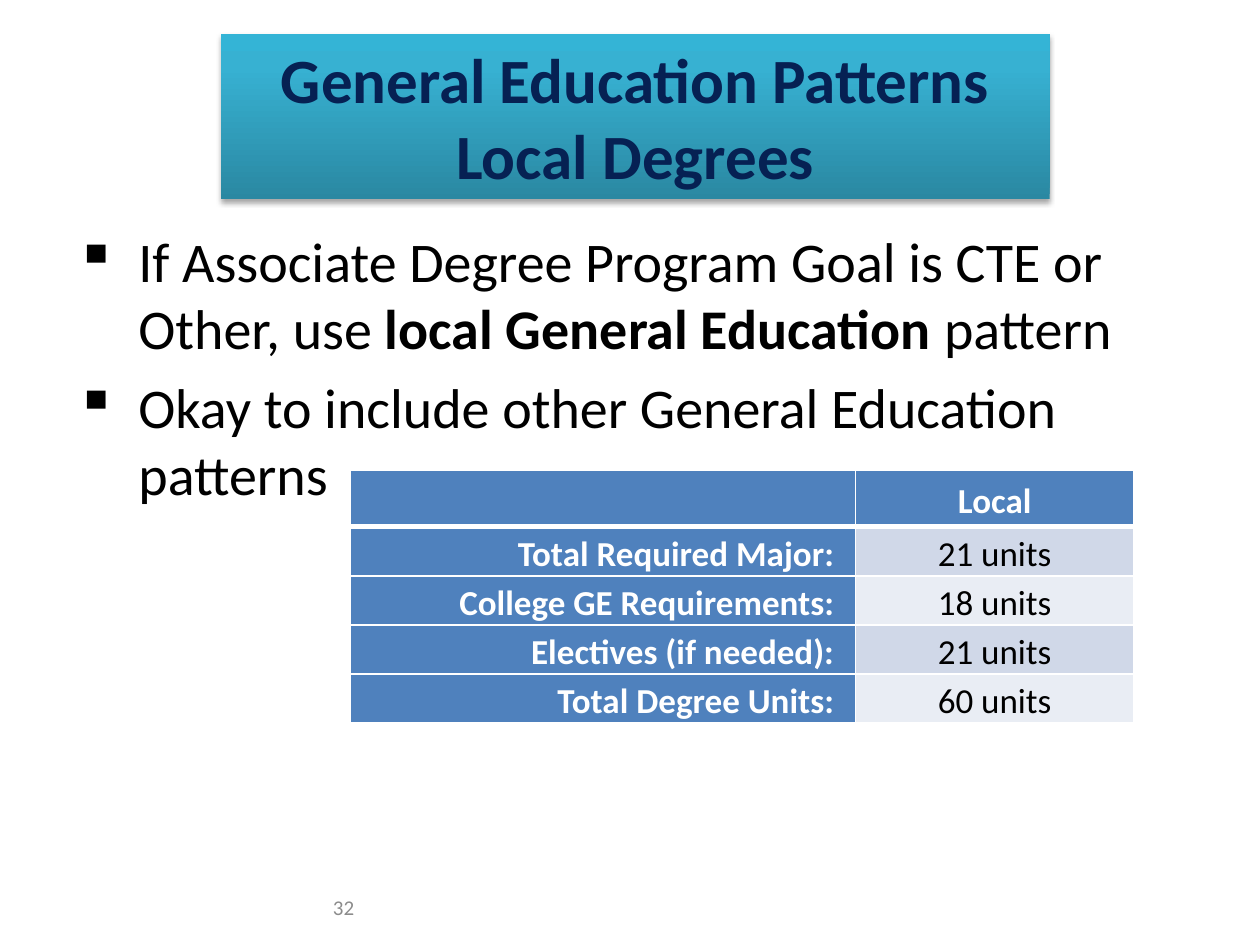
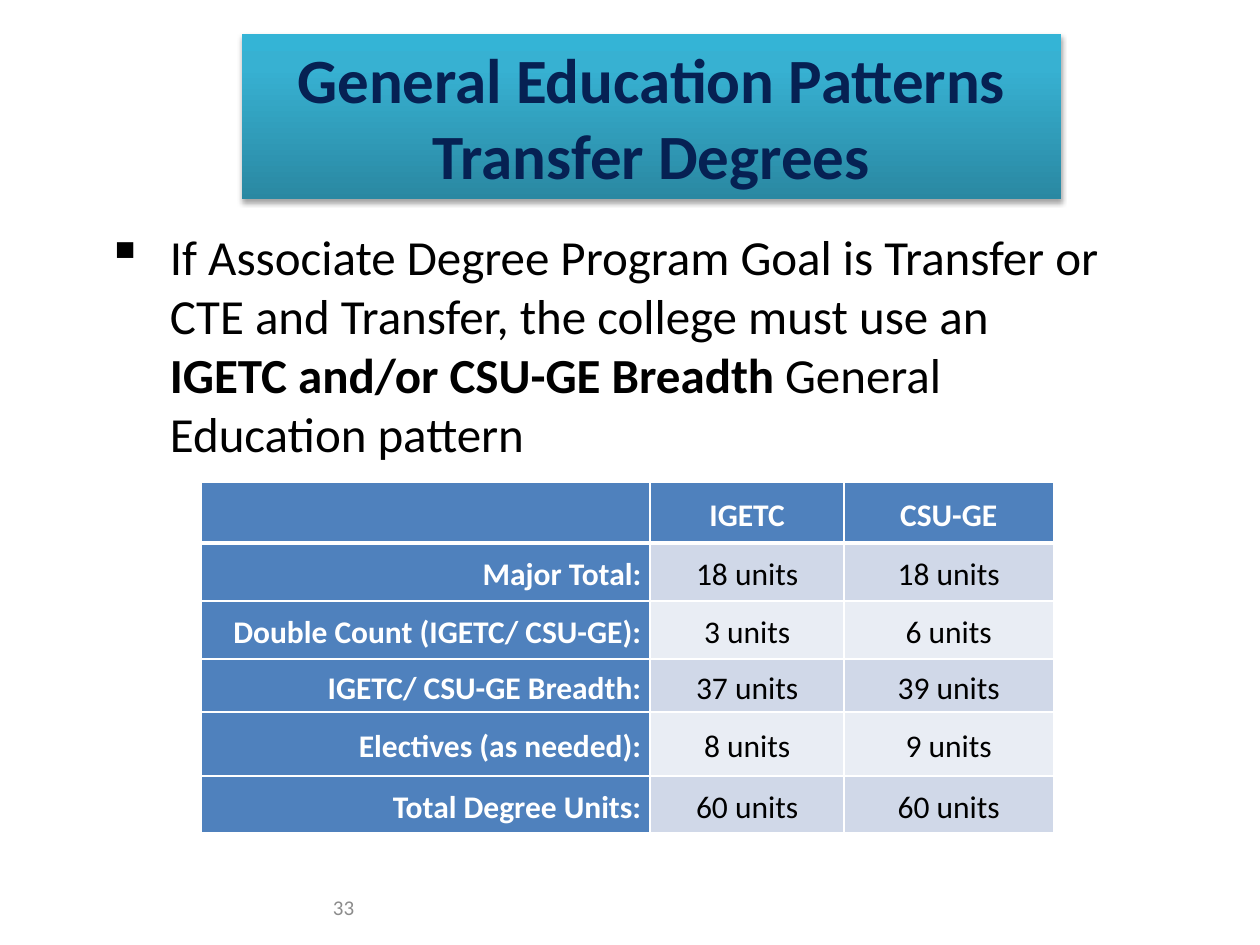
from copy import deepcopy

from lxml import etree
from pptx import Presentation
from pptx.dml.color import RGBColor
from pptx.enum.shapes import MSO_SHAPE
from pptx.enum.text import MSO_ANCHOR, PP_ALIGN
from pptx.oxml.ns import qn
from pptx.util import Inches, Pt

LEFT, CENTER, RIGHT = PP_ALIGN.LEFT, PP_ALIGN.CENTER, PP_ALIGN.RIGHT
TOP, MIDDLE = MSO_ANCHOR.TOP, MSO_ANCHOR.MIDDLE
RECTANGLE = MSO_SHAPE.RECTANGLE

FONT = "Calibri"
NAVY, BLACK, WHITE, GRAY = "062153", "000000", "FFFFFF", "8C8C8C"
HEADER_BLUE = "4F81BD"
BANDS = ["D0D8E8", "E9EDF4"]
TITLE_GRADIENT = [(0, "2A88A2"), (0.8, "37B1D2"), (1, "34B4D6")]
BULLET_HANG = 0.5

# Each bullet is a list of (text, bold) runs.
SLIDES = [
    {
        "number": "32",
        "title": "General Education Patterns\nLocal Degrees",
        "title_box": (1.75, 0.27, 6.58, 1.31),
        "bullets": [
            [("If Associate Degree Program Goal is CTE or Other, use ", False),
             ("local General Education ", True),
             ("pattern", False)],
            [("Okay to include other General Education patterns", False)],
        ],
        "body_box": (0.5, 1.75, 8.5, 2.36),
        "body_size": 32,
        "body_indent": 0.5,
        "units": [
            ["", "Local"],
            ["Total Required Major:", "21 units"],
            ["College GE Requirements:", "18 units"],
            ["Electives (if needed):", "21 units"],
            ["Total Degree Units:", "60 units"],
        ],
        "table_at": (2.78, 3.73),
        "columns": [4.01, 2.21],
        "rows": [0.45] + [0.39] * 4,
        "table_size": 20,
        "cell_margin": 0.17,
    },
    {
        "number": "33",
        "title": "General Education Patterns Transfer Degrees",
        "title_box": (1.92, 0.27, 6.5, 1.31),
        "bullets": [
            [("If Associate Degree Program Goal is Transfer or CTE and "
              "Transfer, the college must use an ", False),
             ("IGETC and/or CSU-GE Breadth ", True),
             ("General Education pattern", False)],
        ],
        "body_box": (0.5, 1.75, 8.42, 1.99),
        "body_size": 28,
        "body_indent": 0.75,
        "units": [
            ["", "IGETC", "CSU-GE"],
            ["Major Total:", "18 units", "18 units"],
            ["Double Count (IGETC/ CSU-GE):", "3 units", "6 units"],
            ["IGETC/ CSU-GE Breadth:", "37 units", "39 units"],
            ["Electives (as needed):", "8 units", "9 units"],
            ["Total Degree Units:", "60 units", "60 units"],
        ],
        "table_at": (1.6, 3.83),
        "columns": [3.56, 1.54, 1.66],
        "rows": [0.48, 0.46, 0.46, 0.42, 0.51, 0.45],
        "table_size": 18,
        "cell_margin": 0.07,
    },
]


def rgb(color):
    return RGBColor.from_string(color)


def inches(values):
    return [Inches(value) for value in values]


def add_xml(parent, tag, **attributes):
    element = etree.SubElement(parent, qn(tag))
    for name, value in attributes.items():
        element.set(name, str(value))
    return element


def write(frame, paragraphs, size, color, align=LEFT, anchor=TOP,
          line_spacing=None, gap=0, bullet_indent=None):
    """Fill a text frame with paragraphs, each a list of (text, bold) runs."""
    frame.word_wrap = True
    frame.vertical_anchor = anchor
    for index, runs in enumerate(paragraphs):
        paragraph = frame.add_paragraph() if index else frame.paragraphs[0]
        paragraph.alignment = align
        if line_spacing:
            paragraph.line_spacing = line_spacing
        if index:
            paragraph.space_before = Pt(gap)
        if bullet_indent is not None:
            properties = paragraph._p.get_or_add_pPr()
            properties.set("marL", str(Inches(bullet_indent)))
            properties.set("indent", str(-Inches(BULLET_HANG)))
            add_xml(properties, "a:buChar", char="▪")
        for text, bold in runs:
            for line_index, line in enumerate(text.split("\n")):
                if line_index:
                    paragraph.add_line_break()
                run = paragraph.add_run()
                run.text = line
                run.font.name = FONT
                run.font.size = Pt(size)
                run.font.bold = bold
                run.font.color.rgb = rgb(color)


def add_title(slide, title, box):
    band = slide.shapes.add_shape(RECTANGLE, *inches(box))
    band.line.fill.background()
    band.fill.gradient()
    band.fill.gradient_angle = 90
    stop_list = band._element.spPr.find(".//" + qn("a:gsLst"))
    stop_list.append(deepcopy(stop_list[0]))
    for stop, (position, color) in zip(band.fill.gradient_stops, TITLE_GRADIENT):
        stop.position = position
        stop.color.rgb = rgb(color)

    band.shadow.inherit = False
    effects = band._element.spPr.find(qn("a:effectLst"))
    shadow = add_xml(effects, "a:outerShdw", blurRad=Pt(3.1), dist=Pt(1.8),
                     dir=90 * 60000, rotWithShape=0)
    add_xml(add_xml(shadow, "a:srgbClr", val=BLACK), "a:alpha", val=35000)
    write(band.text_frame, [[(title, True)]], 36, NAVY, CENTER, MIDDLE)


def add_borders(cell, top, bottom):
    properties = cell._tc.get_or_add_tcPr()
    for tag, width in (("a:lnL", 1), ("a:lnR", 1), ("a:lnT", top), ("a:lnB", bottom)):
        fill = add_xml(add_xml(properties, tag, w=Pt(width)), "a:solidFill")
        add_xml(fill, "a:srgbClr", val=WHITE)


def add_units_table(slide, content):
    units, columns, rows = content["units"], content["columns"], content["rows"]
    box = (*content["table_at"], sum(columns), sum(rows))
    table = slide.shapes.add_table(len(rows), len(columns), *inches(box)).table
    for column, width in zip(table.columns, columns):
        column.width = Inches(width)
    for row, height in zip(table.rows, rows):
        row.height = Inches(height)

    for r, values in enumerate(units):
        for c, text in enumerate(values):
            cell = table.cell(r, c)
            heading = r == 0 or c == 0
            add_borders(cell, top=3 if r == 1 else 1, bottom=3 if r == 0 else 1)
            cell.fill.solid()
            cell.fill.fore_color.rgb = rgb(HEADER_BLUE if heading else BANDS[(r - 1) % 2])
            cell.margin_left = cell.margin_right = Inches(content["cell_margin"])
            cell.margin_top = cell.margin_bottom = 0
            cell.vertical_anchor = MIDDLE
            if text:
                write(cell.text_frame, [[(text, heading)]], content["table_size"],
                      WHITE if heading else BLACK, CENTER if c else RIGHT,
                      MIDDLE, line_spacing=1.15)


def add_content_slide(deck, content):
    slide = deck.slides.add_slide(deck.slide_layouts[6])
    number = slide.shapes.add_textbox(*inches((0.58, 7, 2.33, 0.4)))
    write(number.text_frame, [[(content["number"], False)]], 12, GRAY, RIGHT, MIDDLE)
    add_title(slide, content["title"], content["title_box"])
    body = slide.shapes.add_textbox(*inches(content["body_box"]))
    size = content["body_size"]
    write(body.text_frame, content["bullets"], size, BLACK,
          gap=size * 0.2, bullet_indent=content["body_indent"])
    add_units_table(slide, content)


def main():
    deck = Presentation()
    deck.slide_width, deck.slide_height = Inches(10), Inches(7.5)
    for content in SLIDES:
        add_content_slide(deck, content)
    deck.save("out.pptx")


if __name__ == "__main__":
    main()
